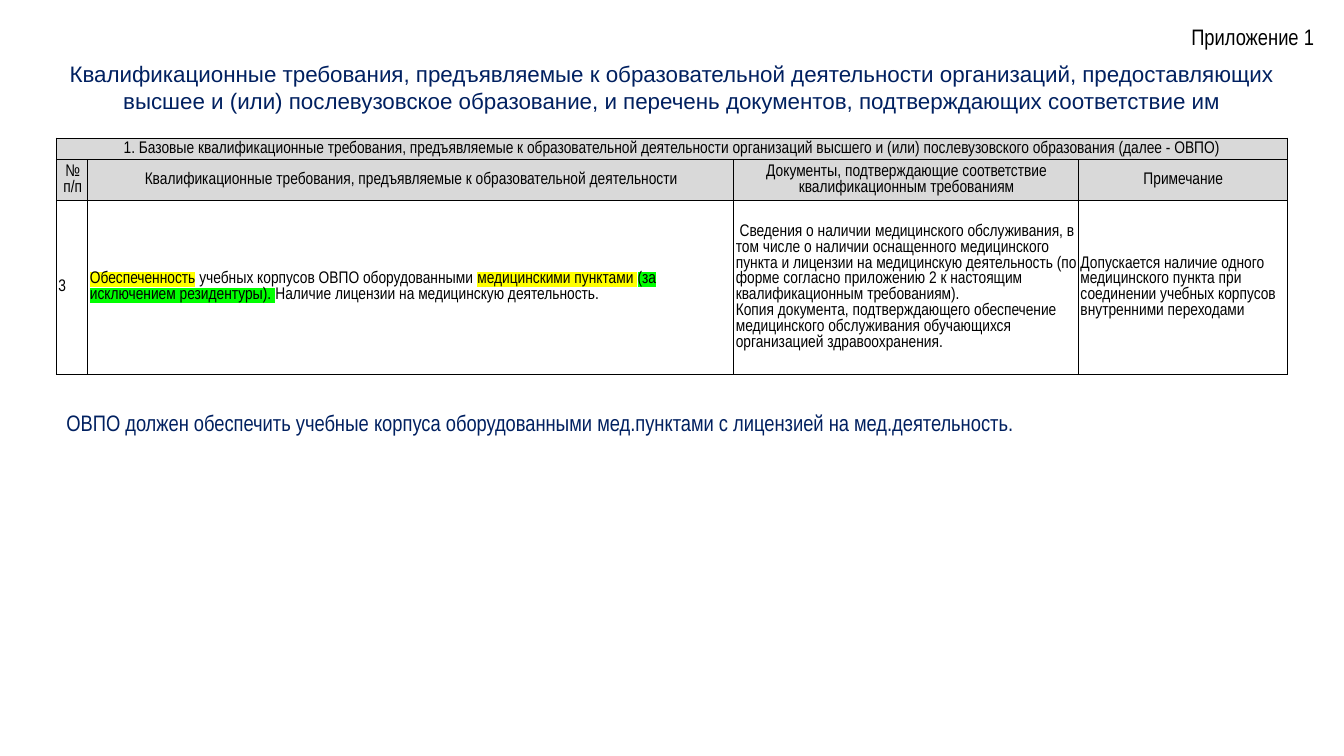
from lxml.etree import SubElement
from pptx import Presentation
from pptx.dml.color import RGBColor
from pptx.enum.text import MSO_ANCHOR, MSO_AUTO_SIZE, PP_ALIGN
from pptx.oxml.ns import qn
from pptx.util import Pt

COLORS = {
    "black": "000000",
    "navy": "002060",
    "header": "D9D9D9",
    "yellow": "FFFF00",
    "green": "00FF00",
}
LEFT, WIDTH = 40.32, 879.12
COLUMN_WIDTHS = [22.5, 461.4, 246.2, 149.02]
ROW_HEIGHTS = [15.4, 29, 124.5]

SECTION = ("1. Базовые квалификационные требования, предъявляемые к образовательной "
           "деятельности организаций высшего и (или) послевузовского образования (далее - ОВПО)")
HEADINGS = [
    "№ п/п",
    "Квалификационные требования, предъявляемые к образовательной деятельности",
    "Документы, подтверждающие соответствие квалификационным требованиям",
    "Примечание",
]
# Each cell is a list of paragraphs; each paragraph is a list of (text, highlight).
REQUIREMENT = [
    [[("3", None)]],
    [[
        ("Обеспеченность", "yellow"),
        (" учебных корпусов ОВПО оборудованными ", None),
        ("медицинскими пунктами ", "yellow"),
        ("(за исключением резидентуры). ", "green"),
        ("Наличие лицензии на медицинскую деятельность.", None),
    ]],
    [
        [(" Сведения о наличии медицинского обслуживания, в том числе о наличии оснащенного "
          "медицинского пункта и лицензии на медицинскую деятельность (по форме согласно "
          "приложению 2 к настоящим квалификационным требованиям).", None)],
        [("Копия документа, подтверждающего обеспечение медицинского обслуживания "
          "обучающихся организацией здравоохранения.", None)],
    ],
    [[("Допускается наличие одного медицинского пункта при соединении учебных корпусов "
       "внутренними переходами", None)]],
]


def add_span(para, text, size=12, font="Arial Narrow", color="black", highlight=None):
    span = para.add_run()
    span.text = text
    span.font.size = Pt(size)
    span.font.color.rgb = RGBColor.from_string(COLORS[color])
    if highlight:
        mark = SubElement(span.font._element, qn("a:highlight"))
        SubElement(mark, qn("a:srgbClr"), val=COLORS[highlight])
    span.font.name = font


def add_text(page, text, left, top, width, height, align=PP_ALIGN.LEFT, wrap=True, **style):
    box = page.shapes.add_textbox(Pt(left), Pt(top), Pt(width), Pt(height))
    frame = box.text_frame
    frame.word_wrap = wrap
    frame.auto_size = MSO_AUTO_SIZE.SHAPE_TO_FIT_TEXT
    para = frame.paragraphs[0]
    para.alignment = align
    add_span(para, text, size=16, **style)


def add_borders(cell):
    properties = cell._tc.get_or_add_tcPr()
    for side in ("lnL", "lnR", "lnT", "lnB"):
        line = SubElement(properties, qn(f"a:{side}"), w=str(Pt(1)))
        fill = SubElement(line, qn("a:solidFill"))
        SubElement(fill, qn("a:srgbClr"), val=COLORS["black"])


def fill_cell(cell, paragraphs, align=PP_ALIGN.LEFT, inset=0.72, fill=None):
    cell.vertical_anchor = MSO_ANCHOR.MIDDLE
    cell.margin_left = cell.margin_right = Pt(inset)
    cell.margin_top = cell.margin_bottom = Pt(inset)
    for index, spans in enumerate(paragraphs):
        frame = cell.text_frame
        para = frame.add_paragraph() if index else frame.paragraphs[0]
        para.alignment = align
        para.line_spacing = Pt(11.3)
        para._p.get_or_add_pPr().set("marL", str(Pt(0.72)))
        for text, highlight in spans:
            add_span(para, text, highlight=highlight)
    if fill:
        cell.fill.solid()
        cell.fill.fore_color.rgb = RGBColor.from_string(COLORS[fill])
    else:
        cell.fill.background()


def add_requirements_table(page):
    table = page.shapes.add_table(
        len(ROW_HEIGHTS), len(COLUMN_WIDTHS),
        Pt(LEFT), Pt(98.64), Pt(WIDTH), Pt(sum(ROW_HEIGHTS))).table
    table.first_row = table.horz_banding = False
    for column, width in zip(table.columns, COLUMN_WIDTHS):
        column.width = Pt(width)
    for row, height in zip(table.rows, ROW_HEIGHTS):
        row.height = Pt(height)
    for cell in table.iter_cells():
        add_borders(cell)

    header = {"align": PP_ALIGN.CENTER, "inset": 0, "fill": "header"}
    table.cell(0, 0).merge(table.cell(0, len(COLUMN_WIDTHS) - 1))
    fill_cell(table.cell(0, 0), [[(SECTION, None)]], **header)
    for column, heading in enumerate(HEADINGS):
        fill_cell(table.cell(1, column), [[(heading, None)]], **header)
    for column, paragraphs in enumerate(REQUIREMENT):
        fill_cell(table.cell(2, column), paragraphs)


def main():
    deck = Presentation()
    deck.slide_width, deck.slide_height = Pt(960), Pt(540)
    page = deck.slides.add_slide(deck.slide_layouts[6])

    add_text(page, "Приложение 1\u00a0".replace("\u00a0", " "), 843.84, 12.96, 106.56, 26.64,
             wrap=False)
    add_text(page, "Квалификационные требования, предъявляемые к образовательной деятельности "
             "организаций, предоставляющих высшее и (или) послевузовское образование, и перечень "
             "документов, подтверждающих соответствие им",
             LEFT, 39.6, WIDTH, 46.08, align=PP_ALIGN.CENTER, font="Arial", color="navy")
    add_requirements_table(page)
    add_text(page, "ОВПО должен обеспечить учебные корпуса оборудованными мед.пунктами "
             "с лицензией на мед.деятельность.",
             LEFT, 288.72, WIDTH, 26.64, color="navy")
    deck.save("out.pptx")


if __name__ == "__main__":
    main()
